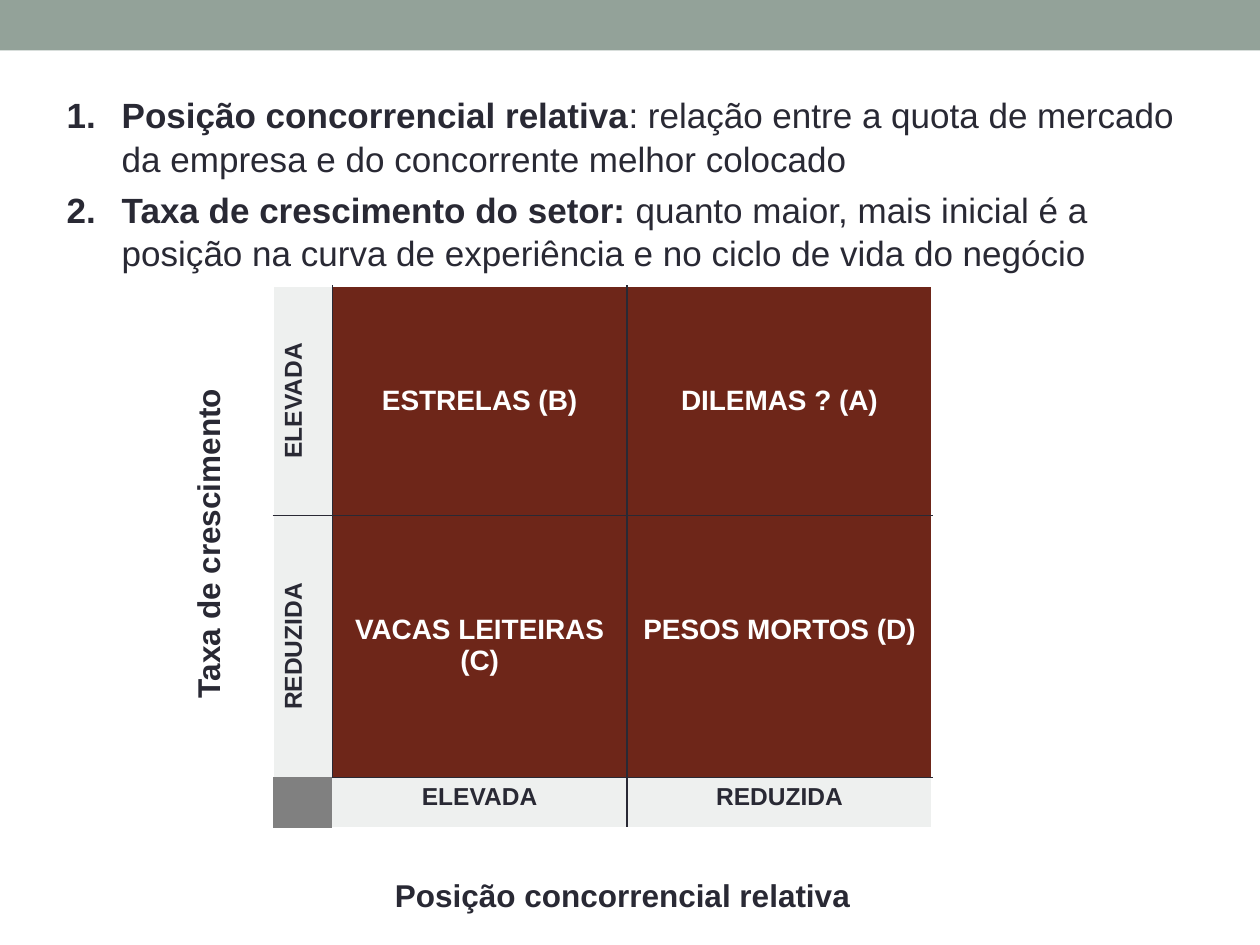
"""Build the growth and competitive position matrix slide."""
from dataclasses import dataclass

from lxml.etree import SubElement
from pptx import Presentation
from pptx.dml.color import RGBColor
from pptx.enum.shapes import MSO_SHAPE
from pptx.enum.text import MSO_AUTO_SIZE, PP_ALIGN
from pptx.oxml import parse_xml
from pptx.oxml.ns import nsdecls, qn
from pptx.util import Cm, Pt


@dataclass(frozen=True)
class Theme:
    font: str = "Arial"
    ink: str = "292934"
    white: str = "FFFFFF"
    bar: str = "93A299"
    pale: str = "EEF0EF"
    rust: str = "6E2619"
    gray: str = "808080"
    body: int = 20
    axis: int = 18
    cell: int = 16
    head: int = 14


THEME = Theme()

POINTS = [
    ("Posição concorrencial relativa",
     ": relação entre a quota de mercado da empresa e do concorrente melhor colocado"),
    ("Taxa de crescimento do setor: ",
     "quanto maior, mais inicial é a posição na curva de experiência e no ciclo de vida do negócio"),
]
MATRIX = [
    ["ELEVADA", "ESTRELAS (B)", "DILEMAS ? (A)"],
    ["REDUZIDA", "VACAS LEITEIRAS (C)", "PESOS MORTOS (D)"],
    ["", "ELEVADA", "REDUZIDA"],
]
COLS = [1.19, 5.94, 6.15]
ROWS = [4.62, 5.28, 1.02]
AXES = [
    ("Posição concorrencial relativa", (6.3, 17.53, 12.5, 1.02), None),
    ("Taxa de crescimento", (3.68, 5.99, 1.27, 9.93), "vert270"),
]
CORNER = (2, 0)
SIDES = [("lnL", 0, -1), ("lnR", 0, 1), ("lnT", -1, 0), ("lnB", 1, 0)]


def style(font, size, color, bold=True):
    font.name = THEME.font
    font.size = Pt(size)
    font.bold = bold
    font.color.rgb = RGBColor.from_string(color)


def label(frame, text, size, color):
    para = frame.paragraphs[0]
    para.text = text
    para.alignment = PP_ALIGN.CENTER
    style(para.font, size, color)


def add_bar(slide, width):
    bar = slide.shapes.add_shape(MSO_SHAPE.RECTANGLE, 0, 0, width, Cm(1.02))
    bar.shadow.inherit = False
    bar.fill.solid()
    bar.fill.fore_color.rgb = RGBColor.from_string(THEME.bar)
    bar.line.fill.background()


def fill_body(body):
    body.left, body.top, body.width, body.height = map(Cm, (1.09, 1.73, 22.86, 4.19))
    frame = body.text_frame
    frame.auto_size = MSO_AUTO_SIZE.NONE
    for i, point in enumerate(POINTS):
        para = frame.add_paragraph() if i else frame.paragraphs[0]
        para.space_before = Pt(4)
        para.line_spacing = 1.04
        for text, bold in zip(point, (True, False)):
            run = para.add_run()
            run.text = text
            style(run.font, THEME.body, THEME.ink, bold)
        props = para._p.get_or_add_pPr()
        props.set("marL", str(Cm(1.11)))
        props.set("indent", str(-Cm(1.11)))
        SubElement(props, qn("a:buFont"), typeface=THEME.font)
        SubElement(props, qn("a:buAutoNum"), type="arabicPeriod")


def edge(spot, near):
    if CORNER in (spot, near):
        return None
    inside = 0 <= near[0] < len(ROWS) and 0 <= near[1] < len(COLS)
    return THEME.ink if inside else THEME.white


def add_edges(cell, row, col):
    props = cell._tc.get_or_add_tcPr()
    for i, (side, down, right) in enumerate(SIDES):
        color = edge((row, col), (row + down, col + right))
        paint = (f'<a:solidFill><a:srgbClr val="{color}"/></a:solidFill>'
                 if color else "<a:noFill/>")
        props.insert(i, parse_xml(
            f'<a:{side} {nsdecls("a")} w="{Pt(1)}">{paint}</a:{side}>'))


def fill_cell(cell, row, col):
    inner = row < 2 and col > 0
    fill = THEME.gray if (row, col) == CORNER else THEME.rust if inner else THEME.pale
    size, color = (THEME.cell, THEME.white) if inner else (THEME.head, THEME.ink)
    label(cell.text_frame, MATRIX[row][col], size, color)
    cell.fill.solid()
    cell.fill.fore_color.rgb = RGBColor.from_string(fill)
    if inner:
        cell.margin_top = Cm(2)
    elif row < 2:
        cell._tc.get_or_add_tcPr().set("vert", "vert270")
    add_edges(cell, row, col)


def add_matrix(slide):
    table = slide.shapes.add_table(
        len(ROWS), len(COLS), Cm(5.51), Cm(5.77), Cm(sum(COLS)), Cm(sum(ROWS))).table
    table.first_row = table.horz_banding = False
    for col, width in enumerate(COLS):
        table.columns[col].width = Cm(width)
    for row, height in enumerate(ROWS):
        table.rows[row].height = Cm(height)
        for col in range(len(COLS)):
            fill_cell(table.cell(row, col), row, col)


def add_axes(slide):
    for text, place, turn in AXES:
        frame = slide.shapes.add_textbox(*map(Cm, place)).text_frame
        frame.word_wrap = True
        label(frame, text, THEME.axis, THEME.ink)
        if turn:
            frame._txBody.bodyPr.set("vert", turn)


def main():
    deck = Presentation()
    deck.slide_width, deck.slide_height = Cm(25.4), Cm(19.05)
    slide = deck.slides.add_slide(deck.slide_layouts[1])
    title = slide.shapes.title._element
    title.getparent().remove(title)
    add_bar(slide, deck.slide_width)
    fill_body(slide.placeholders[1])
    add_matrix(slide)
    add_axes(slide)
    deck.save("out.pptx")


if __name__ == "__main__":
    main()
